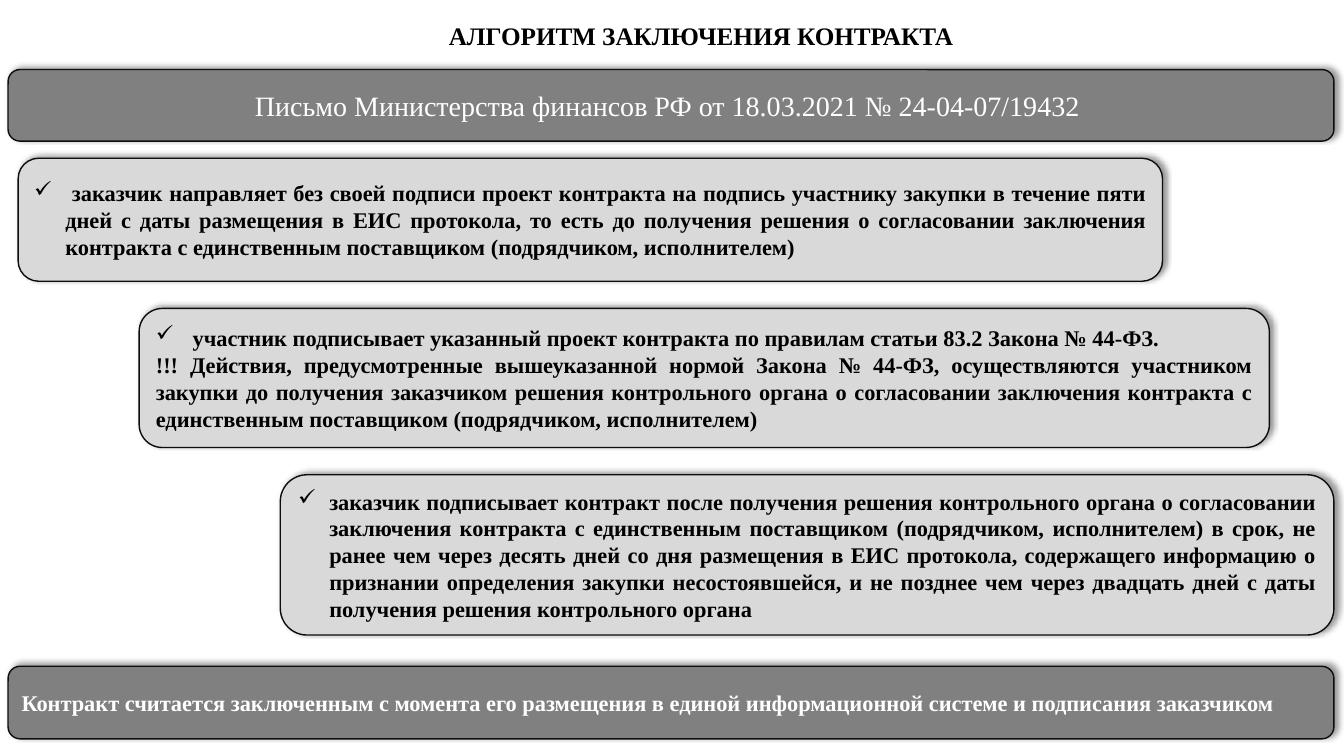
from lxml import etree
from pptx import Presentation
from pptx import util as u
from pptx.dml.color import RGBColor
from pptx.enum import shapes, text
from pptx.oxml.ns import qn

FONT = "Times New Roman"
BLACK = RGBColor(0x00, 0x00, 0x00)
WHITE = RGBColor(0xFF, 0xFF, 0xFF)
OUTLINE = RGBColor(0x0D, 0x0D, 0x0D)
DARK_GREY = RGBColor(0x80, 0x80, 0x80)
LIGHT_GREY = RGBColor(0xD9, 0xD9, 0xD9)
CENTER, JUSTIFY = text.PP_ALIGN.CENTER, text.PP_ALIGN.JUSTIFY

BAR_LEFT, BAR_WIDTH = 0.08, 13.15

# Each step: its box and its paragraphs as (wording, has a check mark)
STEPS = [
    ((0.18, 1.57, 11.35, 1.22), [
        (" заказчик направляет без своей подписи проект контракта на подпись "
         "участнику закупки в течение пяти дней с даты размещения в ЕИС протокола, "
         "то есть до получения решения о согласовании заключения контракта с "
         "единственным поставщиком (подрядчиком, исполнителем)", True)]),
    ((1.38, 3.06, 11.21, 1.38), [
        (" участник подписывает указанный проект контракта по правилам "
         "статьи 83.2 Закона № 44-ФЗ.", True),
        ("!!! Действия, предусмотренные вышеуказанной нормой Закона № 44-ФЗ, "
         "осуществляются участником закупки до получения заказчиком решения "
         "контрольного органа о согласовании заключения контракта с единственным "
         "поставщиком (подрядчиком, исполнителем)", False)]),
    ((2.78, 4.71, 10.45, 1.59), [
        ("заказчик подписывает контракт после получения решения контрольного органа "
         "о согласовании заключения контракта с единственным поставщиком "
         "(подрядчиком, исполнителем) в срок, не ранее чем через десять дней со дня "
         "размещения в ЕИС протокола, содержащего информацию о признании определения "
         "закупки несостоявшейся, и не позднее чем через двадцать дней с даты "
         "получения решения контрольного органа", True)]),
]


def add_text(paragraph, wording, size, color, bold, align):
    paragraph.alignment = align
    run = paragraph.add_run()
    run.text = wording
    run.font.name = FONT
    run.font.size = u.Pt(size)
    run.font.bold = bold
    run.font.color.rgb = color


def add_check_mark(paragraph):
    properties = paragraph._p.get_or_add_pPr()
    properties.set("marL", str(u.Inches(0.31)))
    properties.set("indent", str(u.Inches(-0.31)))
    etree.SubElement(properties, qn("a:buChar"), char="✓")


def add_soft_shadow(panel):
    panel.shadow.inherit = False
    effects = panel._element.spPr.find(qn("a:effectLst"))
    shadow = etree.SubElement(
        effects, qn("a:outerShdw"), blurRad=str(u.Pt(4)), dist=str(u.Pt(3)),
        dir=str(315 * 60000), algn="bl", rotWithShape="0")
    color = etree.SubElement(shadow, qn("a:srgbClr"), val=str(BLACK))
    etree.SubElement(color, qn("a:alpha"), val="40000")


def add_panel(slide, box, fill):
    """Rounded panel with outline and shadow; returns its text frame."""
    panel = slide.shapes.add_shape(
        shapes.MSO_SHAPE.ROUNDED_RECTANGLE, *map(u.Inches, box))
    panel.fill.solid()
    panel.fill.fore_color.rgb = fill
    panel.line.color.rgb = OUTLINE
    panel.line.width = u.Pt(1)
    add_soft_shadow(panel)
    frame = panel.text_frame
    frame.word_wrap = True
    frame.vertical_anchor = text.MSO_ANCHOR.MIDDLE
    return frame


def add_title(slide, box):
    title = slide.shapes.title
    title.left, title.top, title.width, title.height = map(u.Inches, box)
    frame = title.text_frame
    frame.auto_size = text.MSO_AUTO_SIZE.NONE
    frame.vertical_anchor = text.MSO_ANCHOR.MIDDLE
    add_text(frame.paragraphs[0], "АЛГОРИТМ ЗАКЛЮЧЕНИЯ КОНТРАКТА ",
             18, BLACK, True, CENTER)


def add_bar(slide, box, wording, size, bold, align):
    frame = add_panel(slide, box, DARK_GREY)
    add_text(frame.paragraphs[0], wording, size, WHITE, bold, align)


def add_step(slide, box, paragraphs):
    frame = add_panel(slide, box, LIGHT_GREY)
    for index, (wording, checked) in enumerate(paragraphs):
        paragraph = frame.add_paragraph() if index else frame.paragraphs[0]
        add_text(paragraph, wording, 16, BLACK, True, JUSTIFY)
        if checked:
            add_check_mark(paragraph)


def main():
    deck = Presentation()
    deck.slide_width, deck.slide_height = u.Inches(13.33), u.Inches(7.5)
    slide = deck.slides.add_slide(deck.slide_layouts.get_by_name("Title Only"))

    add_title(slide, (0.32, 0.08, 13.33, 0.54))

    # Source letter
    add_bar(slide, (BAR_LEFT, 0.69, BAR_WIDTH, 0.71),
            "Письмо Министерства финансов РФ от 18.03.2021 № 24-04-07/19432 ",
            20, False, CENTER)

    # Staircase of steps
    for box, paragraphs in STEPS:
        add_step(slide, box, paragraphs)

    # Conclusion
    add_bar(slide, (BAR_LEFT, 6.61, BAR_WIDTH, 0.72),
            "Контракт считается заключенным с момента его размещения в единой "
            "информационной системе и подписания заказчиком", 16, True, JUSTIFY)

    deck.save("out.pptx")


if __name__ == "__main__":
    main()
